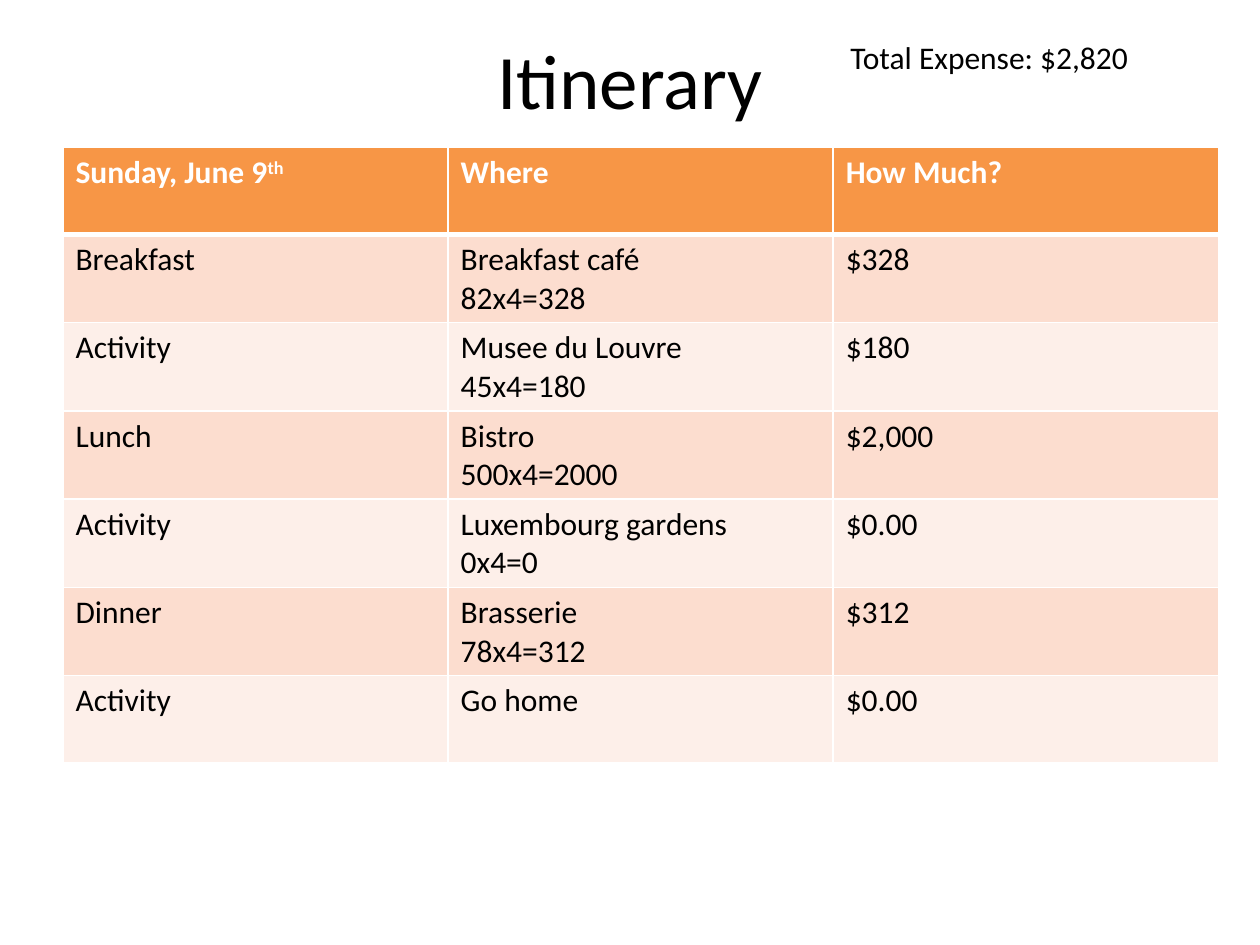
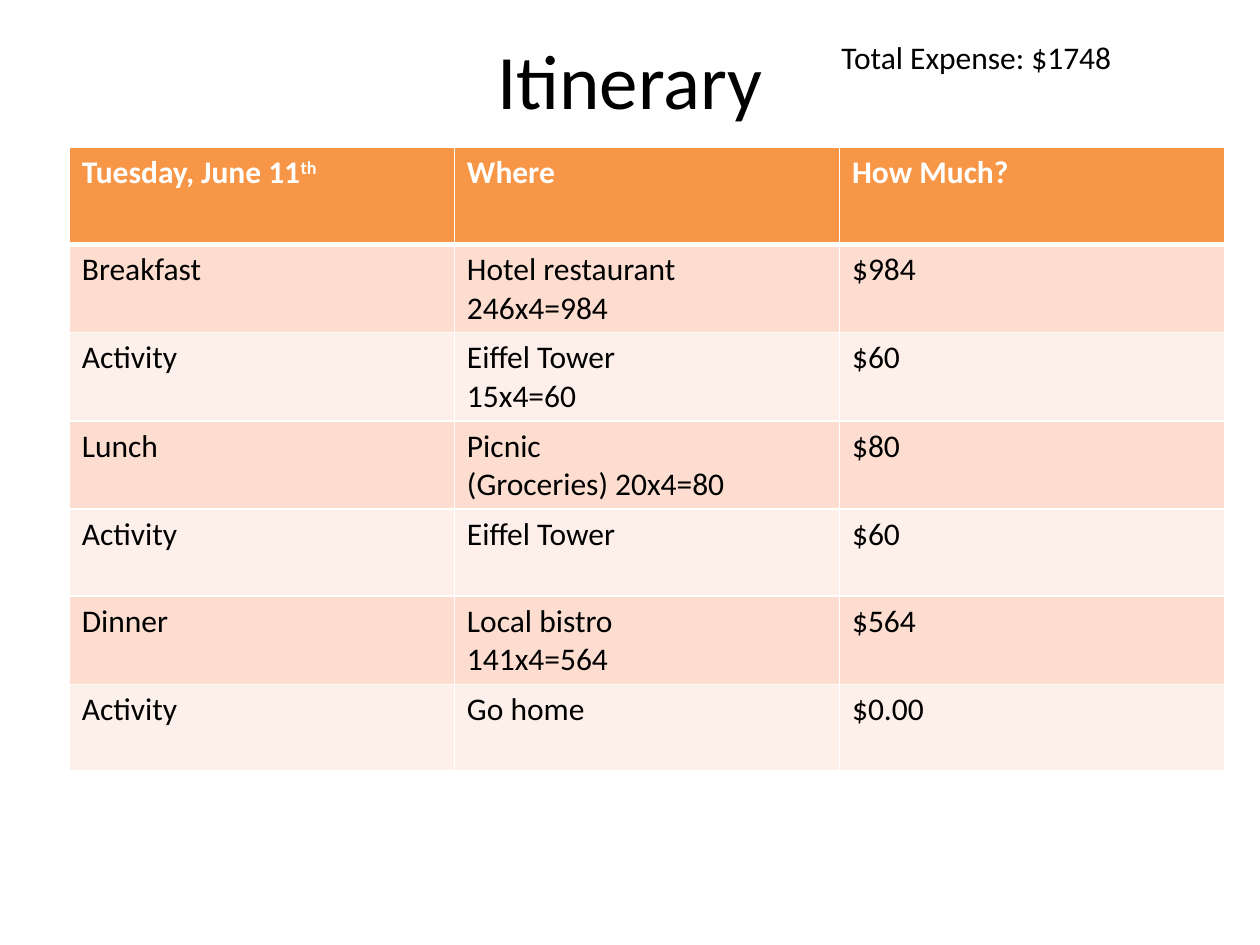
"""Build the two itinerary slides, each with a title, a total and a day table."""
import lxml.etree
import pptx
import pptx.dml.color
import pptx.enum.text
import pptx.oxml.ns
import pptx.util

Inches = pptx.util.Inches
FONT = "Calibri"
COLORS = {
    "text": "000000",
    "white": "FFFFFF",
    "header": "F79646",
    "odd_row": "FCDDCF",
    "even_row": "FDEFE9",
}
BODY_SIZE = 18
TITLE_SIZE = 44
TABLE_TOP = 1.17
TABLE_WIDTH = 9.17
ROW_HEIGHT = 0.69
THIN_BORDER = 1
THICK_BORDER = 3

DAYS = [
    {
        "date": "Sunday, June 9",
        "total": "Total Expense: $2,820",
        "total_left": 6.65,
        "table_left": 0.5,
        "header_height": 0.69,
        "rows": [
            ("Breakfast", "Breakfast café\n82x4=328", "$328"),
            ("Activity", "Musee du Louvre\n45x4=180", "$180"),
            ("Lunch", "Bistro\n500x4=2000", "$2,000"),
            ("Activity", "Luxembourg gardens\n0x4=0", "$0.00"),
            ("Dinner", "Brasserie\n78x4=312", "$312"),
            ("Activity", "Go home", "$0.00"),
        ],
    },
    {
        "date": "Tuesday, June 11",
        "total": "Total Expense: $1748",
        "total_left": 6.58,
        "table_left": 0.55,
        "header_height": 0.77,
        "rows": [
            ("Breakfast", "Hotel restaurant\n246x4=984", "$984"),
            ("Activity", "Eiffel Tower\n15x4=60", "$60"),
            ("Lunch", "Picnic\n(Groceries) 20x4=80", "$80"),
            ("Activity", "Eiffel Tower", "$60"),
            ("Dinner", "Local bistro\n141x4=564", "$564"),
            ("Activity", "Go home", "$0.00"),
        ],
    },
]


def rgb(name):
    """Return the named colour."""
    return pptx.dml.color.RGBColor.from_string(COLORS[name])


def format_runs(text_frame, size, color="text", bold=False):
    """Apply the font, size, colour and weight to every run."""
    for paragraph in text_frame.paragraphs:
        for run in paragraph.runs:
            run.font.name = FONT
            run.font.size = pptx.util.Pt(size)
            run.font.bold = bold
            run.font.color.rgb = rgb(color)


def add_text(slide, text, left, top, width, height, size):
    """Add a wrapping text box and return its text frame."""
    shape = slide.shapes.add_textbox(
        Inches(left), Inches(top), Inches(width), Inches(height))
    text_frame = shape.text_frame
    text_frame.word_wrap = True
    text_frame.text = text
    format_runs(text_frame, size)
    return text_frame


def add_title(slide):
    """Add the centred slide title."""
    text_frame = add_text(slide, "Itinerary", 0.5, 0, 9, 1.25, TITLE_SIZE)
    text_frame.vertical_anchor = pptx.enum.text.MSO_ANCHOR.MIDDLE
    text_frame.paragraphs[0].alignment = pptx.enum.text.PP_ALIGN.CENTER


def add_total(slide, text, left):
    """Add the total expense beside the title."""
    text_frame = add_text(slide, text, left, 0.25, 3.08, 0.4, BODY_SIZE)
    text_frame.auto_size = pptx.enum.text.MSO_AUTO_SIZE.SHAPE_TO_FIT_TEXT


def set_borders(cell, top, bottom):
    """Draw white borders around a cell, with widths in points."""
    properties = cell._tc.get_or_add_tcPr()
    widths = {"L": THIN_BORDER, "R": THIN_BORDER, "T": top, "B": bottom}
    for side, width in widths.items():
        line = lxml.etree.SubElement(
            properties, pptx.oxml.ns.qn(f"a:ln{side}"), w=str(pptx.util.Pt(width)))
        fill = lxml.etree.SubElement(line, pptx.oxml.ns.qn("a:solidFill"))
        lxml.etree.SubElement(
            fill, pptx.oxml.ns.qn("a:srgbClr"), val=COLORS["white"])


def fill_cell(cell, text, row_index):
    """Write one cell and style it by its row."""
    is_header = row_index == 0
    set_borders(
        cell,
        THICK_BORDER if row_index == 1 else THIN_BORDER,
        THICK_BORDER if is_header else THIN_BORDER)
    band = "header" if is_header else "odd_row" if row_index % 2 else "even_row"
    cell.fill.solid()
    cell.fill.fore_color.rgb = rgb(band)
    cell.text_frame.text = text
    format_runs(
        cell.text_frame, BODY_SIZE, "white" if is_header else "text", is_header)


def add_ordinal(cell):
    """Append a raised ordinal ending to the date."""
    run = cell.text_frame.paragraphs[0].add_run()
    run.text = "th"
    format_runs(cell.text_frame, BODY_SIZE, "white", True)
    run._r.get_or_add_rPr().set("baseline", "30000")


def add_day_table(slide, day):
    """Add the table of meals and activities for one day."""
    rows = [(day["date"], "Where", "How Much?"), *day["rows"]]
    heights = [day["header_height"]] + [ROW_HEIGHT] * len(day["rows"])
    table = slide.shapes.add_table(
        len(rows), len(rows[0]), Inches(day["table_left"]), Inches(TABLE_TOP),
        Inches(TABLE_WIDTH), Inches(sum(heights))).table
    for row_index, (texts, height) in enumerate(zip(rows, heights)):
        table.rows[row_index].height = Inches(height)
        for column_index, text in enumerate(texts):
            fill_cell(table.cell(row_index, column_index), text, row_index)
    add_ordinal(table.cell(0, 0))


def main():
    """Build and save the presentation."""
    presentation = pptx.Presentation()
    presentation.slide_width = Inches(10)
    presentation.slide_height = Inches(7.5)
    for day in DAYS:
        slide = presentation.slides.add_slide(presentation.slide_layouts[6])
        add_title(slide)
        add_total(slide, day["total"], day["total_left"])
        add_day_table(slide, day)
    presentation.save("out.pptx")


if __name__ == "__main__":
    main()
